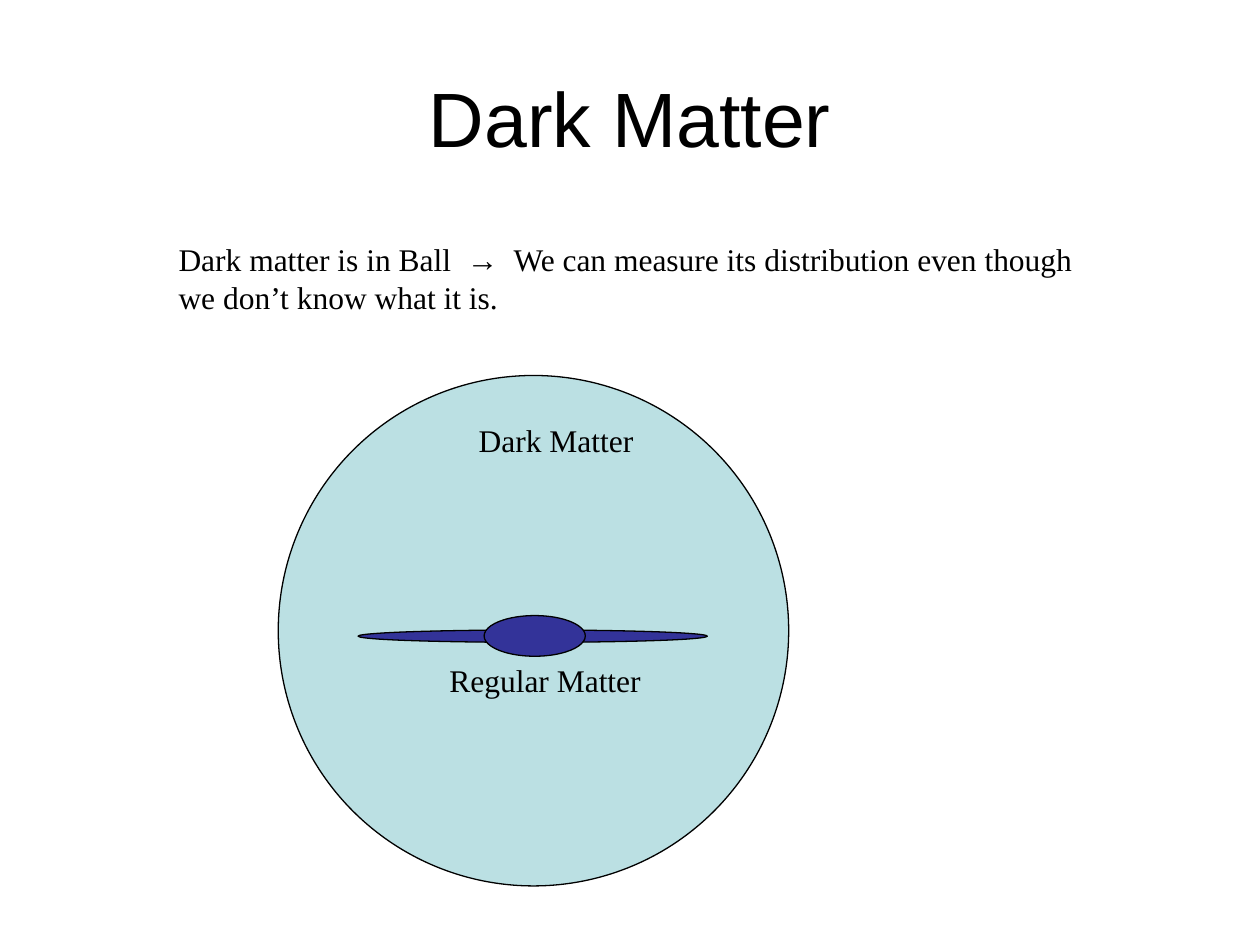
"""Build the Dark Matter slide: a galaxy disc inside a ball of dark matter."""
from dataclasses import dataclass
from typing import Any

from pptx import Presentation
from pptx import util as u
from pptx.dml.color import RGBColor
from pptx.enum import shapes, text

HUES = {"ink": "000000", "halo": "BBE0E3", "disc": "333399"}
SERIF = "Times New Roman"


@dataclass
class Box:
    left: float
    top: float
    width: float
    height: float

    def span(self) -> tuple:
        return tuple(u.Cm(n) for n in (self.left, self.top, self.width, self.height))


@dataclass
class Oval:
    box: Box
    hue: str


@dataclass
class Label:
    box: Box
    words: str
    wrap: bool = False


OVALS = [
    Oval(Box(5.61, 7.57, 10.29, 10.29), "halo"),
    Oval(Box(7.22, 12.7, 7.04, 0.25), "disc"),
    Oval(Box(9.76, 12.41, 2.04, 0.82), "disc"),
]
INTRO = Label(
    Box(3.35, 4.72, 19.4, 1.78),
    "Dark matter is in Ball  →  We can measure its distribution "
    "even though we don’t know what it is.",
    wrap=True,
)
NAMES = [
    Label(Box(9.4, 8.36, 3.63, 1.02), "Dark Matter"),
    Label(Box(8.81, 13.21, 4.37, 1.02), "Regular Matter"),
]


def color(name: str) -> RGBColor:
    return RGBColor.from_string(HUES[name])


def write(frame: Any, words: str, *, font: str = SERIF, size: int = 18,
          align: Any = text.PP_ALIGN.LEFT, anchor: Any = text.MSO_ANCHOR.TOP,
          wrap: bool = True) -> None:
    frame.word_wrap = wrap
    frame.vertical_anchor = anchor
    para = frame.paragraphs[0]
    para.alignment = align
    run = para.add_run()
    run.text = words
    run.font.name = font
    run.font.size = u.Pt(size)
    run.font.color.rgb = color("ink")


def draw_oval(slide: Any, oval: Oval) -> None:
    shape = slide.shapes.add_shape(shapes.MSO_SHAPE.OVAL, *oval.box.span())
    shape.shadow.inherit = False
    shape.fill.solid()
    shape.fill.fore_color.rgb = color(oval.hue)
    shape.line.color.rgb = color("ink")
    shape.line.width = u.Pt(0.75)


def draw_label(slide: Any, label: Label) -> None:
    frame = slide.shapes.add_textbox(*label.box.span()).text_frame
    write(frame, label.words, wrap=label.wrap)
    frame.auto_size = text.MSO_AUTO_SIZE.SHAPE_TO_FIT_TEXT


def main() -> None:
    deck = Presentation()
    deck.slide_width, deck.slide_height = u.Cm(25.4), u.Cm(19.05)
    slide = deck.slides.add_slide(deck.slide_layouts[5])
    title = slide.shapes.title
    title.left, title.top, title.width, title.height = Box(1.27, 0.76, 22.86, 3.18).span()
    write(title.text_frame, "Dark Matter", font="Arial", size=44,
          align=text.PP_ALIGN.CENTER, anchor=text.MSO_ANCHOR.MIDDLE)
    draw_label(slide, INTRO)
    for oval in OVALS:
        draw_oval(slide, oval)
    for name in NAMES:
        draw_label(slide, name)
    deck.save("out.pptx")


if __name__ == "__main__":
    main()
